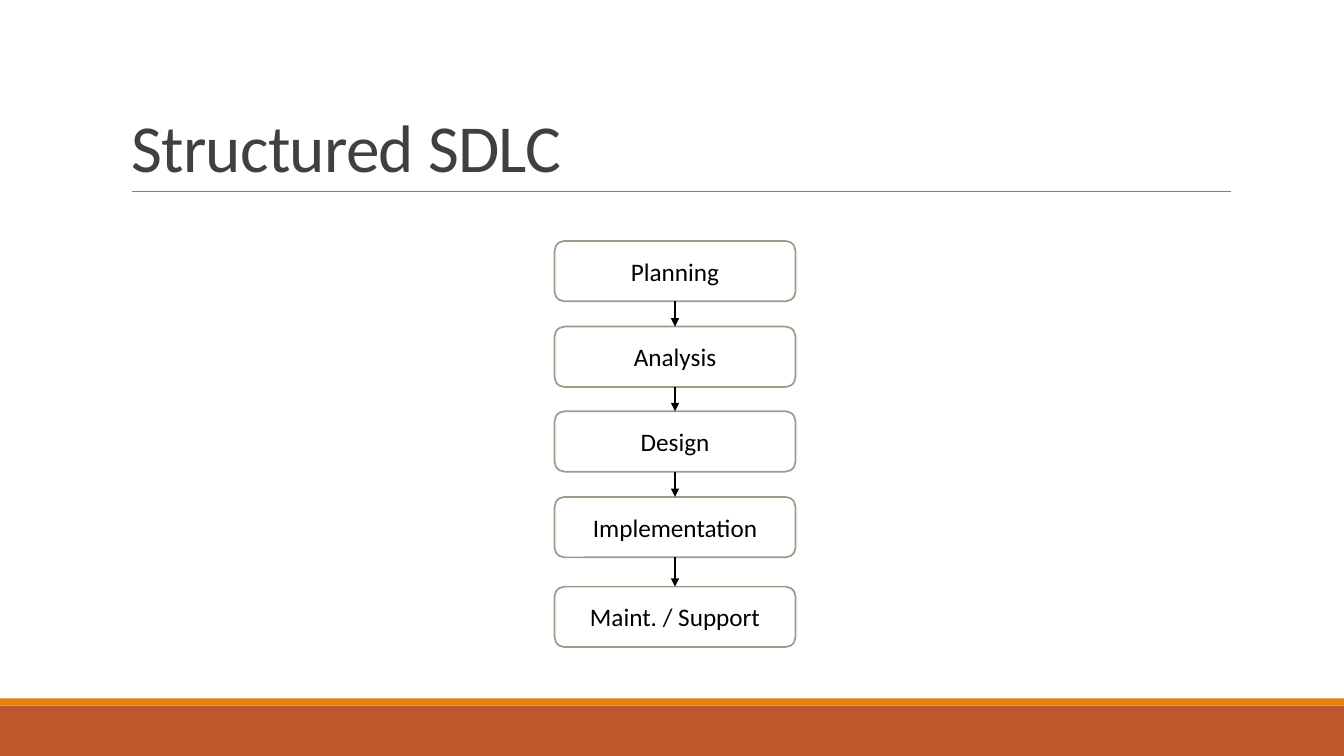
"""Builds the Structured SDLC slide: a vertical chain of five phases."""
from lxml import etree
from pptx import Presentation
from pptx.dml.color import RGBColor
from pptx.enum.shapes import MSO_CONNECTOR, MSO_SHAPE
from pptx.enum.text import MSO_ANCHOR, MSO_AUTO_SIZE, PP_ALIGN
from pptx.oxml.ns import qn
from pptx.util import Inches, Pt

RECT, ROUNDED = MSO_SHAPE.RECTANGLE, MSO_SHAPE.ROUNDED_RECTANGLE
STRAIGHT = MSO_CONNECTOR.STRAIGHT
BOTTOM, MIDDLE = MSO_ANCHOR.BOTTOM, MSO_ANCHOR.MIDDLE
LEFT, CENTER = PP_ALIGN.LEFT, PP_ALIGN.CENTER
NO_FIT = MSO_AUTO_SIZE.NONE
TOP_SITE, BOTTOM_SITE = 0, 2

TITLE = "Structured SDLC"
PHASES = [
    ("Planning", 2.39),
    ("Analysis", 3.24),
    ("Design", 4.08),
    ("Implementation", 4.93),
    ("Maint. / Support", 5.82),
]
COLORS = {
    "band": "BD582C", "stripe": "E48312", "rule": "808080", "title": "404040",
    "box": "FFFFFF", "border": "94A088", "ink": "000000",
}
FONT = "Calibri"
WIDTH, HEIGHT = 13.33, 7.5
BAND_TOP, STRIPE_HEIGHT = 7, 0.07
BOX_LEFT, BOX_WIDTH, BOX_HEIGHT = 5.5, 2.39, 0.6


def rgb(name):
    return RGBColor.from_string(COLORS[name])


def write(sp, text, size, color, align, anchor, line_spacing=None, spacing=None):
    tf = sp.text_frame
    tf.word_wrap = True
    tf.auto_size = NO_FIT
    tf.vertical_anchor = anchor
    p = tf.paragraphs[0]
    p.alignment = align
    p.line_spacing = line_spacing
    r = p.add_run()
    r.text = text
    r.font.name, r.font.size = FONT, Pt(size)
    r.font.color.rgb = rgb(color)
    if spacing is not None:
        r.font._element.set("spc", str(int(spacing * 100)))


def add_box(s, kind, left, top, width, height, fill, border=None):
    sp = s.shapes.add_shape(kind, *map(Inches, (left, top, width, height)))
    sp.shadow.inherit = False
    sp.fill.solid()
    sp.fill.fore_color.rgb = rgb(fill)
    if border:
        sp.line.color.rgb = rgb(border)
        sp.line.width = Pt(1.25)
    else:
        sp.line.fill.background()
    return sp


def add_line(s, start, end, color, width, arrow=False):
    line = s.shapes.add_connector(STRAIGHT, *map(Inches, (*start, *end)))
    line.line.color.rgb = rgb(color)
    line.line.width = Pt(width)
    if arrow:
        ln = line.line._get_or_add_ln()
        etree.SubElement(ln, qn("a:tailEnd"), type="triangle")
    etree.SubElement(line._element.spPr, qn("a:effectLst"))
    return line


def main():
    prs = Presentation()
    prs.slide_width, prs.slide_height = Inches(WIDTH), Inches(HEIGHT)
    s = prs.slides.add_slide(prs.slide_layouts[5])

    add_box(s, RECT, 0, BAND_TOP, WIDTH, HEIGHT - BAND_TOP, "band")
    add_box(s, RECT, 0, BAND_TOP - STRIPE_HEIGHT, WIDTH, STRIPE_HEIGHT, "stripe")
    add_line(s, (1.31, 1.9), (12.21, 1.9), "rule", 0.5)

    title = s.shapes.title
    title.left, title.top, title.width, title.height = map(Inches, (1.2, 0.31, 11, 1.59))
    write(title, TITLE, 48, "title", LEFT, BOTTOM, line_spacing=0.85, spacing=-0.5)

    boxes = []
    for name, top in PHASES:
        box = add_box(s, ROUNDED, BOX_LEFT, top, BOX_WIDTH, BOX_HEIGHT, "box", "border")
        write(box, name, 18, "ink", CENTER, MIDDLE)
        boxes.append(box)

    for upper, lower in zip(boxes, boxes[1:]):
        arrow = add_line(s, (0, 0), (0, 0), "ink", 1, arrow=True)
        arrow.begin_connect(upper, BOTTOM_SITE)
        arrow.end_connect(lower, TOP_SITE)

    prs.save("out.pptx")


if __name__ == "__main__":
    main()
